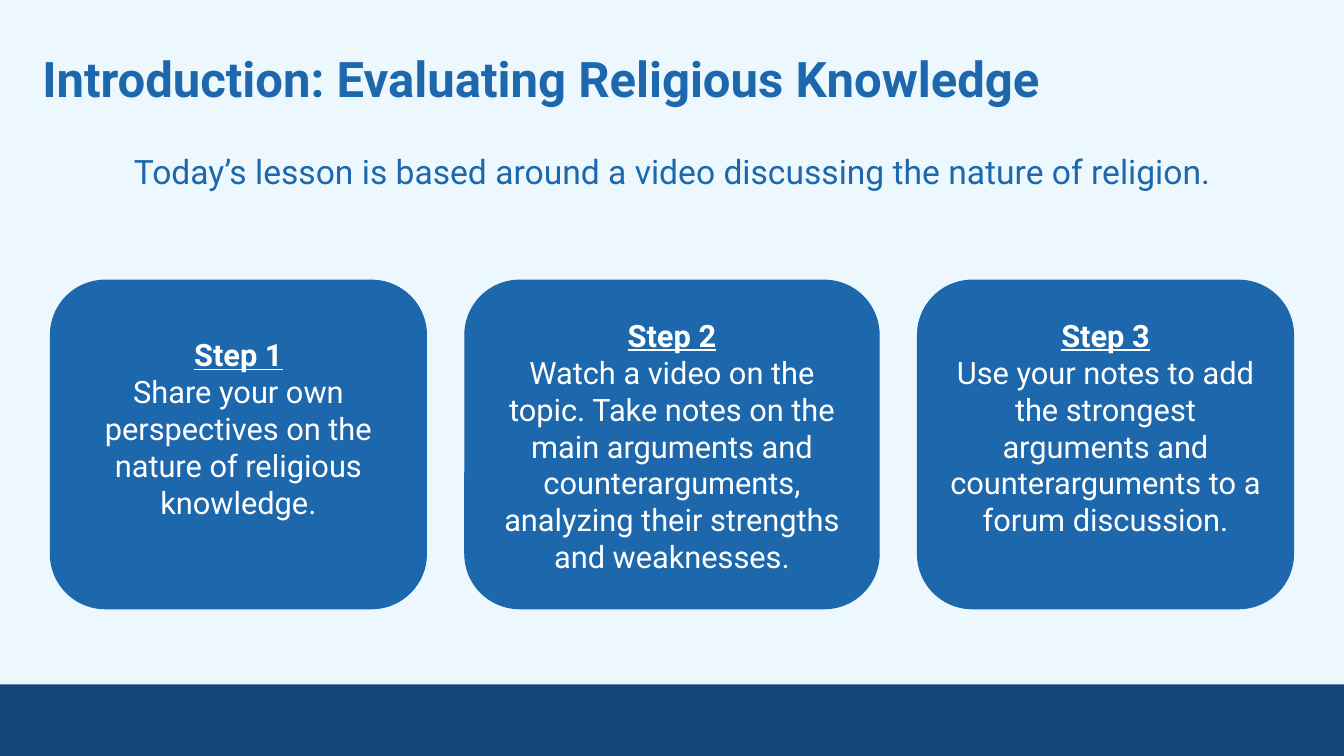
from dataclasses import dataclass

from pptx import Presentation
from pptx.dml.color import RGBColor
from pptx.enum.shapes import MSO_SHAPE
from pptx.enum.text import MSO_ANCHOR, MSO_AUTO_SIZE, PP_ALIGN
from pptx.util import Inches, Pt


@dataclass(frozen=True)
class Theme:
    font: str = "Roboto"
    background: str = "ECF8FE"
    blue: str = "1D67AC"
    navy: str = "144777"
    white: str = "FFFFFF"
    title_size: int = 35
    lead_size: int = 24
    card_size: int = 22


THEME = Theme()
SLIDE_W, SLIDE_H = 13.33, 7.5

# Each step: heading, instruction, card width, space above the heading
STEPS = [
    ("Step 1", "Share your own perspectives on the nature of religious knowledge.",
     3.73, 0.39),
    ("Step 2", "Watch a video on the topic. Take notes on the main arguments and "
     "counterarguments, analyzing their strengths and weaknesses.", 4.11, 0.2),
    ("Step 3", "Use your notes to add the strongest arguments and "
     "counterarguments to a forum discussion.", 3.73, 0.2),
]


def rgb(color):
    return RGBColor.from_string(color)


def write(paragraph, text, *, size, color, bold=False, underline=False,
          align=PP_ALIGN.LEFT):
    paragraph.alignment = align
    run = paragraph.add_run()
    run.text = text
    font = run.font
    font.name, font.size, font.color.rgb = THEME.font, Pt(size), rgb(color)
    font.bold, font.underline = bold, underline


def prepare_frame(frame, inset, top=None):
    frame.word_wrap = True
    frame.auto_size = MSO_AUTO_SIZE.NONE
    frame.vertical_anchor = MSO_ANCHOR.TOP
    frame.margin_left = frame.margin_right = frame.margin_bottom = Inches(inset)
    frame.margin_top = Inches(inset if top is None else top)


def add_block(slide, preset, box, color):
    block = slide.shapes.add_shape(preset, *map(Inches, box))
    block.shadow.inherit = False
    block.fill.solid()
    block.fill.fore_color.rgb = rgb(color)
    block.line.fill.background()
    return block


def add_footer_band(slide, box):
    add_block(slide, MSO_SHAPE.RECTANGLE, box, THEME.navy)


def add_title(slide, box, text):
    title = slide.shapes.title
    title.left, title.top, title.width, title.height = map(Inches, box)
    prepare_frame(title.text_frame, 0.13)
    write(title.text_frame.paragraphs[0], text, size=THEME.title_size,
          color=THEME.blue, bold=True)


def add_lead(slide, box, text):
    lead = slide.shapes.add_textbox(*map(Inches, box))
    prepare_frame(lead.text_frame, 0.1)
    write(lead.text_frame.paragraphs[0], text, size=THEME.lead_size,
          color=THEME.blue, align=PP_ALIGN.CENTER)


def add_card(slide, box, heading, instruction, top_space):
    card = add_block(slide, MSO_SHAPE.ROUNDED_RECTANGLE, box, THEME.blue)
    card.adjustments[0] = 0.167
    card.line.color.rgb = rgb(THEME.blue)
    card.line.width = Pt(0.75)
    frame = card.text_frame
    prepare_frame(frame, 0.1, top=top_space)
    style = dict(size=THEME.card_size, color=THEME.white, align=PP_ALIGN.CENTER)
    write(frame.paragraphs[0], heading, bold=True, underline=True, **style)
    write(frame.add_paragraph(), instruction, **style)


def add_steps(slide, box, steps):
    left, top, width, height = box
    gap = (width - sum(step[2] for step in steps)) / (len(steps) - 1)
    for heading, instruction, card_width, top_space in steps:
        add_card(slide, (left, top, card_width, height), heading, instruction,
                 top_space)
        left += card_width + gap


def build_intro_slide(deck):
    slide = deck.slides.add_slide(deck.slide_layouts[5])  # title only
    slide.background.fill.solid()
    slide.background.fill.fore_color.rgb = rgb(THEME.background)
    add_footer_band(slide, (0, 6.79, SLIDE_W, SLIDE_H - 6.79))
    add_title(slide, (0.29, 0.35, 12.19, 0.86),
              "Introduction: Evaluating Religious Knowledge")
    add_lead(slide, (0.57, 1.4, 12.19, 1.01),
             "Today’s lesson is based around a video discussing the nature of religion.")
    add_steps(slide, (0.5, 2.78, SLIDE_W - 1, 3.26), STEPS)


def main():
    deck = Presentation()
    deck.slide_width, deck.slide_height = Inches(SLIDE_W), Inches(SLIDE_H)
    build_intro_slide(deck)
    deck.save("out.pptx")


if __name__ == "__main__":
    main()
